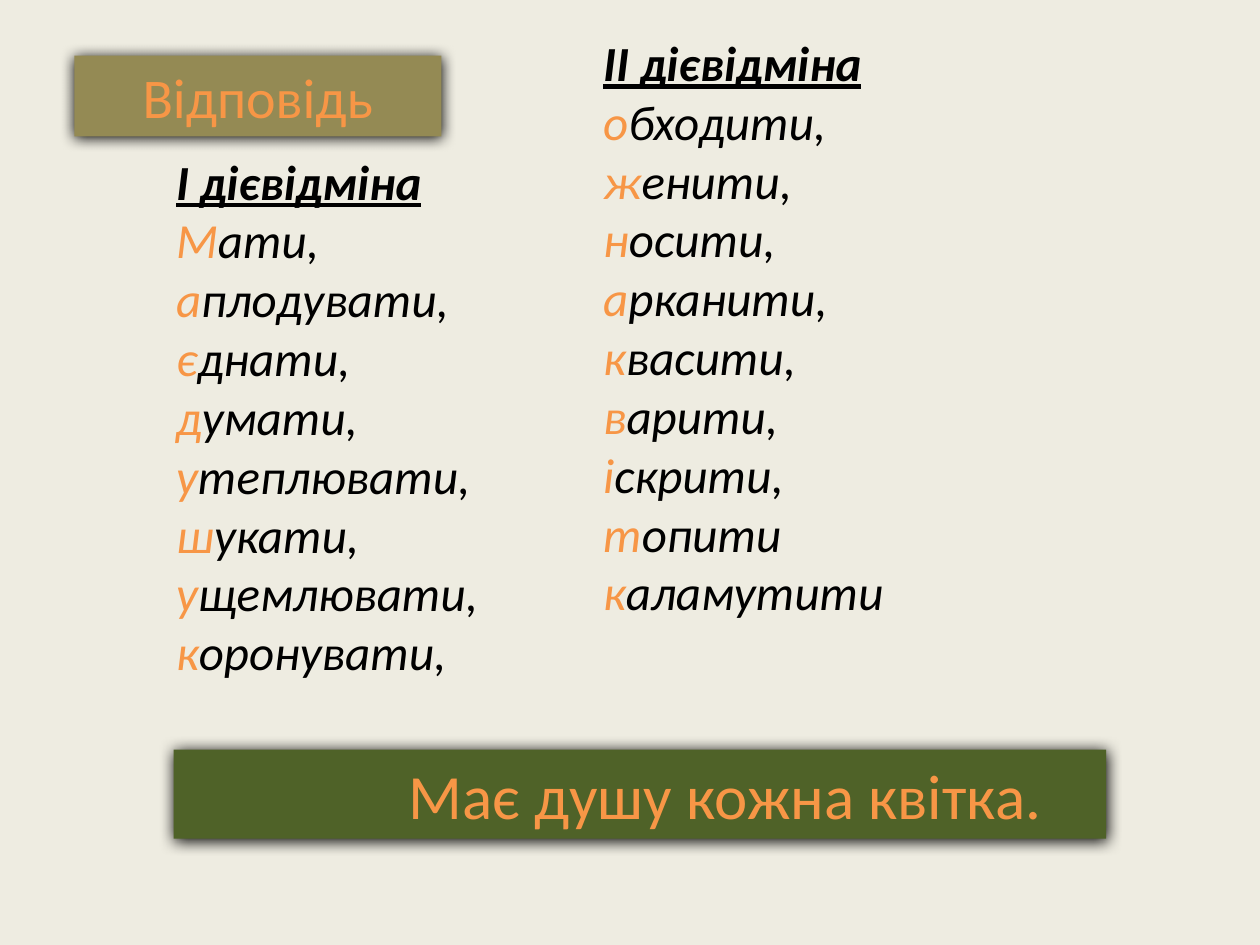
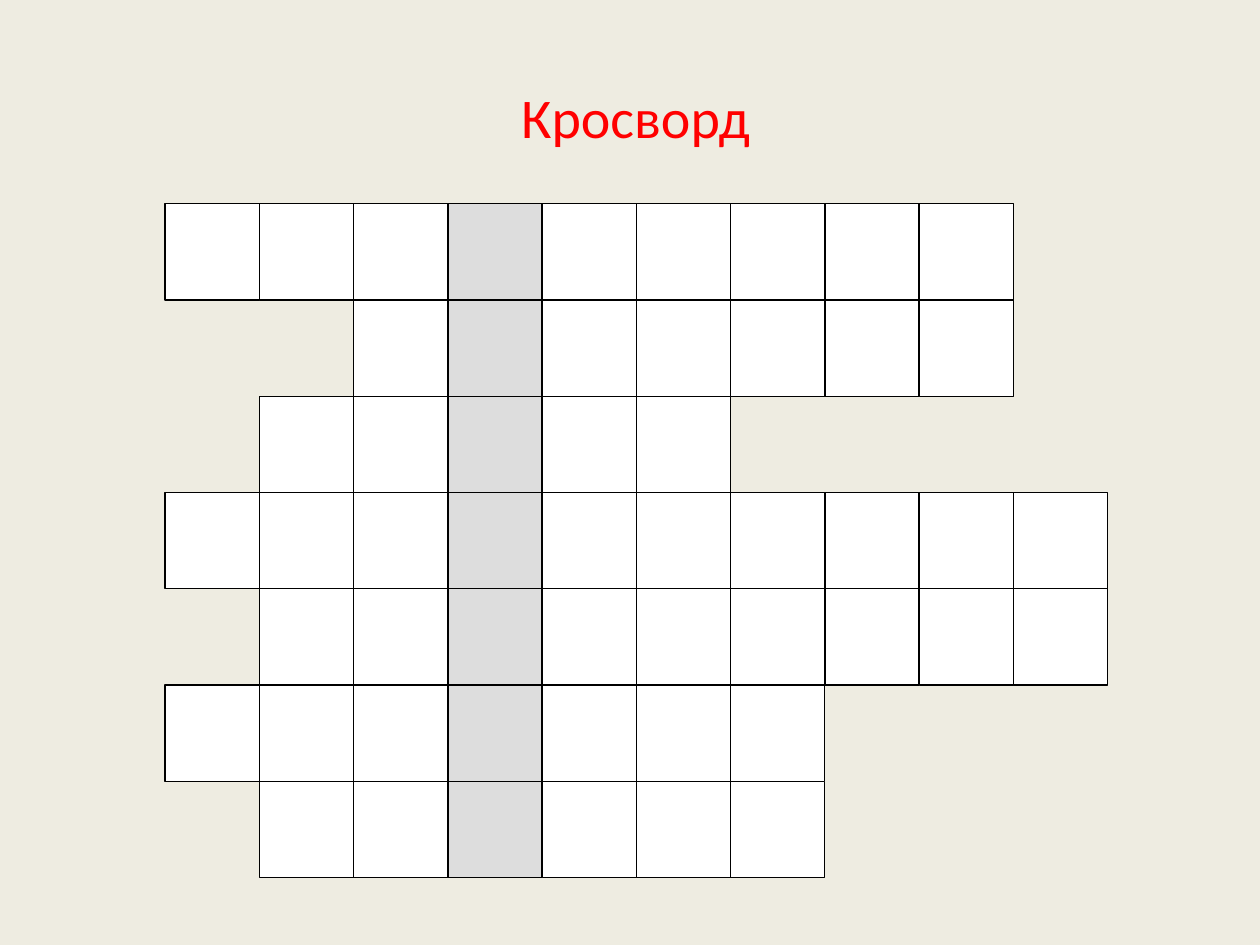
import pptx
import pptx.util
import pptx.dml.color
import pptx.enum.shapes
import pptx.enum.text
import pptx.oxml
import pptx.oxml.ns

Cm = pptx.util.Cm
Pt = pptx.util.Pt
RGBColor = pptx.dml.color.RGBColor
Align = pptx.enum.text.PP_ALIGN
Anchor = pptx.enum.text.MSO_ANCHOR

# Colours and font
CREAM = RGBColor(0xEE, 0xEC, 0xE1)
BLACK = RGBColor(0, 0, 0)
WHITE = RGBColor(255, 255, 255)
GREY = RGBColor(0xDD, 0xDD, 0xDD)
ORANGE = RGBColor(0xF7, 0x96, 0x46)
RED = RGBColor(255, 0, 0)
KHAKI = RGBColor(0x94, 0x8A, 0x54)
GREEN = RGBColor(0x4F, 0x62, 0x28)
FONT = "Calibri"

# Verbs of each conjugation; the first letters spell the answer
FIRST = ["Мати,", "аплодувати,", "єднати,", "думати,", "утеплювати,",
         "шукати,", "ущемлювати,", "коронувати,"]
SECOND = ["обходити,", "женити,", "носити,", "арканити,", "квасити,",
          "варити,", "іскрити,", "топити", "каламутити"]

# Crossword: first column and number of cells in each row
ROWS = [(0, 9), (2, 7), (1, 5), (0, 10), (1, 9), (0, 7), (1, 6)]
KEY = 3
LEFT, TOP = 3.33, 4.11
WIDE, HIGH = 1.9, 1.94

SHADOW = ('<a:outerShdw %s blurRad="%d" dist="%d" dir="5400000" algn="ctr" '
          'rotWithShape="0"><a:srgbClr val="000000"/></a:outerShdw>'
          % (pptx.oxml.ns.nsdecls("a"), Pt(8.5), Pt(1)))


class Deck:
    """Holds the shared style and the current slide."""

    def __init__(self):
        self.prs = pptx.Presentation()
        self.prs.slide_width = Cm(25.4)
        self.prs.slide_height = Cm(19.05)
        self.slide = None

    def page(self):
        self.slide = self.prs.slides.add_slide(self.prs.slide_layouts[5])
        back = self.slide.background.fill
        back.solid()
        back.fore_color.rgb = CREAM

    def run(self, para, text, size, color, bold=False, slant=False, under=False):
        run = para.add_run()
        run.text = text
        font = run.font
        font.name, font.size = FONT, Pt(size)
        font.color.rgb = color
        font.bold, font.italic, font.underline = bold, slant, under

    def paint(self, shape, color):
        shape.fill.solid()
        shape.fill.fore_color.rgb = color

    def shade(self, shape):
        shape.shadow.inherit = False
        effect = shape.element.spPr.find(pptx.oxml.ns.qn("a:effectLst"))
        effect.append(pptx.oxml.parse_xml(SHADOW))

    def center(self, shape, text, size, color):
        frame = shape.text_frame
        frame.word_wrap = True
        frame.auto_size = pptx.enum.text.MSO_AUTO_SIZE.NONE
        frame.vertical_anchor = Anchor.MIDDLE
        para = frame.paragraphs[0]
        para.alignment = Align.CENTER
        self.run(para, text, size, color)

    def title(self, text, color, left, top, width, height):
        shape = self.slide.shapes.title
        shape.left, shape.top = Cm(left), Cm(top)
        shape.width, shape.height = Cm(width), Cm(height)
        self.center(shape, text, 32, color)
        return shape

    def rect(self, color, left, top, width, height):
        shape = self.slide.shapes.add_shape(
            pptx.enum.shapes.MSO_SHAPE.RECTANGLE,
            Cm(left), Cm(top), Cm(width), Cm(height))
        self.paint(shape, color)
        shape.line.fill.background()
        shape.shadow.inherit = False
        return shape

    def cell(self, row, col):
        color = GREY if col == KEY else WHITE
        box = self.rect(color, LEFT + col * WIDE, TOP + row * HIGH, WIDE, HIGH)
        box.line.color.rgb = BLACK
        box.line.width = Pt(0.75)

    def verbs(self, head, words, left, top, width, height):
        box = self.slide.shapes.add_textbox(
            Cm(left), Cm(top), Cm(width), Cm(height))
        frame = box.text_frame
        frame.word_wrap = True
        self.run(frame.paragraphs[0], head, 28, BLACK, True, True, True)
        for word in words:
            para = frame.add_paragraph()
            self.run(para, word[0], 28, ORANGE, slant=True)
            self.run(para, word[1:], 28, BLACK, slant=True)


def main():
    deck = Deck()

    # Slide 1: the answer
    deck.page()
    sign = deck.title("Відповідь", ORANGE, 1.5, 1.12, 7.4, 1.63)
    deck.paint(sign, KHAKI)
    deck.shade(sign)
    deck.verbs("І дієвідміна", FIRST, 3.3, 2.92, 8.2, 11.02)
    deck.verbs("ІІ дієвідміна", SECOND, 11.91, 0.53, 11.99, 15.39)
    bar = deck.rect(GREEN, 3.5, 15.11, 18.8, 1.8)
    deck.shade(bar)
    deck.center(bar, "Має душу кожна квітка.", 36, ORANGE)
    bar.text_frame.margin_left = Cm(3.68)

    # Slide 2: the crossword
    deck.page()
    deck.title("Кросворд", RED, 6.91, 1.52, 11.81, 1.63)
    for row, (start, count) in enumerate(ROWS):
        for col in range(start, start + count):
            deck.cell(row, col)

    deck.prs.save("out.pptx")


if __name__ == "__main__":
    main()
